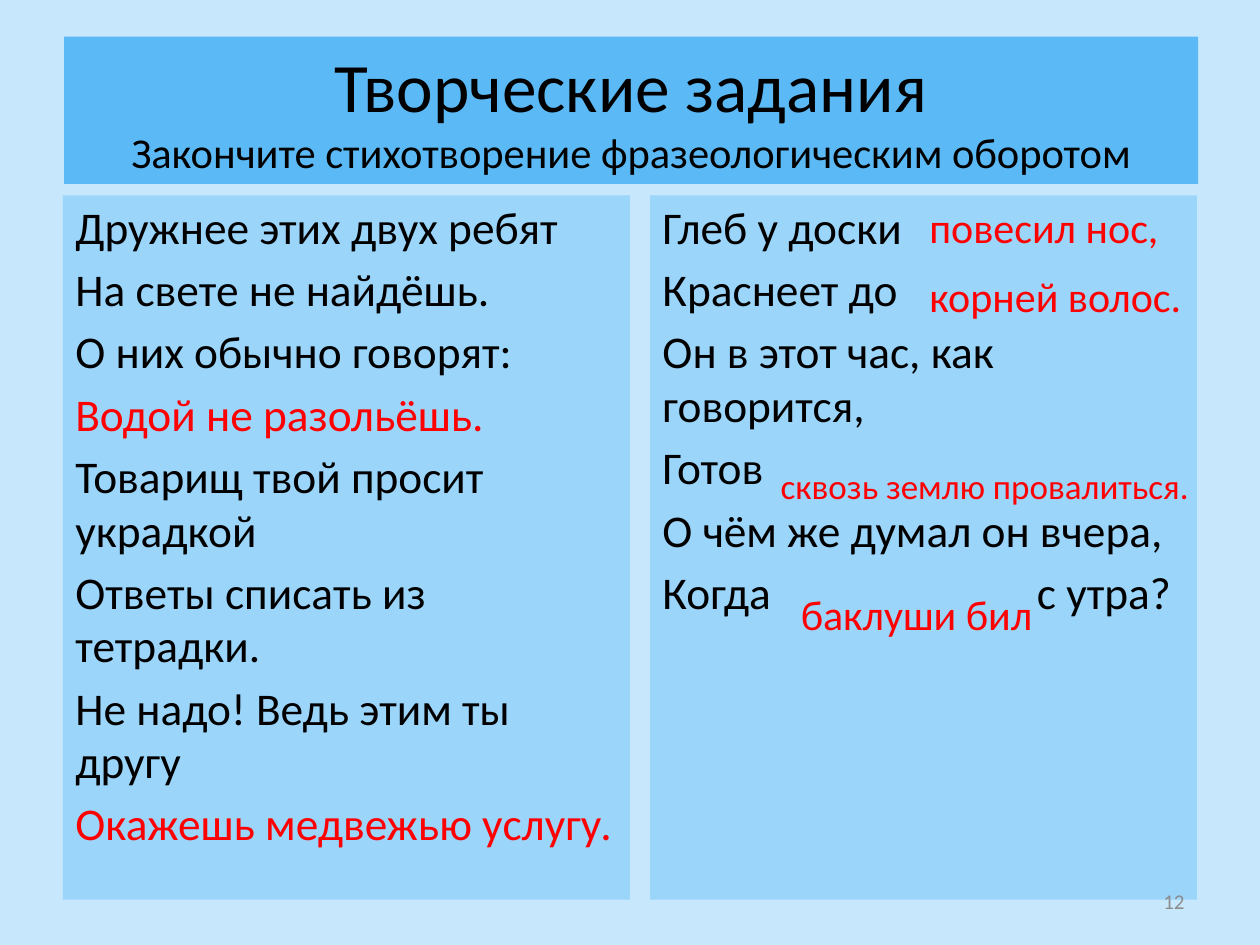
from dataclasses import dataclass

from lxml.etree import SubElement
from pptx import Presentation
from pptx.dml.color import RGBColor
from pptx.enum.shapes import MSO_SHAPE
from pptx.enum.text import MSO_ANCHOR, MSO_AUTO_SIZE, PP_ALIGN
from pptx.oxml.ns import qn
from pptx.util import Pt


@dataclass(frozen=True)
class Theme:
    font: str = "Calibri"
    background: str = "C6E7FC"
    banner: str = "5BBAF6"
    panel: str = "9BD5FA"
    ink: str = "000000"
    answer: str = "FF0000"
    muted: str = "8C8C8C"
    title_size: float = 39.6
    subtitle_size: float = 24.3
    verse_size: float = 25.9
    answer_size: float = 24
    small_answer_size: float = 20
    number_size: float = 12


@dataclass(frozen=True)
class Box:
    left: float
    top: float
    width: float
    height: float

    def lengths(self) -> tuple:
        return Pt(self.left), Pt(self.top), Pt(self.width), Pt(self.height)


@dataclass(frozen=True)
class Line:
    text: str
    color: str


@dataclass(frozen=True)
class Panel:
    box: Box
    lines: tuple


@dataclass(frozen=True)
class Label:
    text: str
    box: Box
    size: float
    color: str
    alignment: PP_ALIGN = PP_ALIGN.LEFT
    anchor: MSO_ANCHOR = MSO_ANCHOR.TOP


THEME = Theme()
PANEL_TOP, PANEL_HEIGHT = 111.6, 402.5
GAP_TAB = 214  # start of the words after the gap in the last verse line

PANELS = (
    Panel(Box(36, PANEL_TOP, 324, PANEL_HEIGHT), (
        Line("Дружнее этих двух ребят", THEME.ink),
        Line("На свете не найдёшь.", THEME.ink),
        Line("О них обычно говорят:", THEME.ink),
        Line("Водой не разольёшь.", THEME.answer),
        Line("Товарищ твой просит украдкой", THEME.ink),
        Line("Ответы списать из тетрадки.", THEME.ink),
        Line("Не надо! Ведь этим ты другу", THEME.ink),
        Line("Окажешь медвежью услугу.", THEME.answer),
    )),
    Panel(Box(371.5, PANEL_TOP, 312.5, PANEL_HEIGHT), (
        Line("Глеб у доски", THEME.ink),
        Line("Краснеет до", THEME.ink),
        Line("Он в этот час, как говорится,", THEME.ink),
        Line("Готов", THEME.ink),
        Line("О чём же думал он вчера,", THEME.ink),
        Line("Когда\tс утра?", THEME.ink),
    )),
)

LABELS = (
    Label("повесил нос,", Box(524, 111.6, 180, 36), THEME.answer_size, THEME.answer),
    Label("корней волос.", Box(524, 151.2, 180, 36), THEME.answer_size, THEME.answer),
    Label("сквозь землю провалиться.", Box(439, 262, 265, 32),
          THEME.small_answer_size, THEME.answer),
    Label("баклуши бил", Box(450.5, 332.6, 170, 36), THEME.answer_size, THEME.answer),
    Label("12", Box(516, 500.5, 168, 28.8), THEME.number_size, THEME.muted,
          PP_ALIGN.RIGHT, MSO_ANCHOR.MIDDLE),
)


def fill_solid(shape, color: str) -> None:
    shape.fill.solid()
    shape.fill.fore_color.rgb = RGBColor.from_string(color)


def prepare_frame(shape, anchor: MSO_ANCHOR):
    frame = shape.text_frame
    formats = {
        "word_wrap": True,
        "auto_size": MSO_AUTO_SIZE.NONE,
        "vertical_anchor": anchor,
        "margin_left": Pt(7.2),
        "margin_right": Pt(7.2),
        "margin_top": Pt(3.6),
        "margin_bottom": Pt(3.6),
    }
    for name, value in formats.items():
        setattr(frame, name, value)
    return frame


def add_text(paragraph, text: str, size: float, color: str) -> None:
    run = paragraph.add_run()
    run.text = text
    for name, value in {"name": THEME.font, "size": Pt(size)}.items():
        setattr(run.font, name, value)
    run.font.color.rgb = RGBColor.from_string(color)


def add_tab_stop(paragraph, position: float) -> None:
    tabs = SubElement(paragraph._p.get_or_add_pPr(), qn("a:tabLst"))
    SubElement(tabs, qn("a:tab"), pos=str(Pt(position)), algn="l")


def draw_title(slide, box: Box) -> None:
    title = slide.shapes.title
    title.left, title.top, title.width, title.height = box.lengths()
    fill_solid(title, THEME.banner)
    paragraph = prepare_frame(title, MSO_ANCHOR.MIDDLE).paragraphs[0]
    paragraph.alignment = PP_ALIGN.CENTER
    add_text(paragraph, "Творческие задания", THEME.title_size, THEME.ink)
    paragraph.add_line_break()
    # The break takes the size of the line it ends
    SubElement(paragraph._p[-1], qn("a:rPr"), sz=str(round(THEME.title_size * 100)))
    add_text(paragraph, "Закончите стихотворение фразеологическим оборотом",
             THEME.subtitle_size, THEME.ink)


def draw_panel(slide, panel: Panel) -> None:
    shape = slide.shapes.add_shape(MSO_SHAPE.RECTANGLE, *panel.box.lengths())
    shape.shadow.inherit = False
    shape.line.fill.background()
    fill_solid(shape, THEME.panel)
    frame = prepare_frame(shape, MSO_ANCHOR.TOP)
    for index, line in enumerate(panel.lines):
        paragraph = frame.add_paragraph() if index else frame.paragraphs[0]
        formats = {
            "alignment": PP_ALIGN.LEFT,
            "line_spacing": 0.98,
            "space_before": Pt(5.2 if index else 0),
        }
        for name, value in formats.items():
            setattr(paragraph, name, value)
        if "\t" in line.text:
            add_tab_stop(paragraph, GAP_TAB)
        add_text(paragraph, line.text, THEME.verse_size, line.color)


def draw_label(slide, label: Label) -> None:
    shape = slide.shapes.add_textbox(*label.box.lengths())
    paragraph = prepare_frame(shape, label.anchor).paragraphs[0]
    paragraph.alignment = label.alignment
    add_text(paragraph, label.text, label.size, label.color)


def main() -> None:
    presentation = Presentation()
    presentation.slide_width, presentation.slide_height = Pt(720), Pt(540)
    slide = presentation.slides.add_slide(presentation.slide_layouts[5])
    fill_solid(slide.background, THEME.background)

    # Heading
    draw_title(slide, Box(36.7, 20.9, 648, 84.2))

    # Two columns of verse
    for panel in PANELS:
        draw_panel(slide, panel)

    # Answers in the gaps and the slide number
    for label in LABELS:
        draw_label(slide, label)

    presentation.save("out.pptx")


if __name__ == "__main__":
    main()
